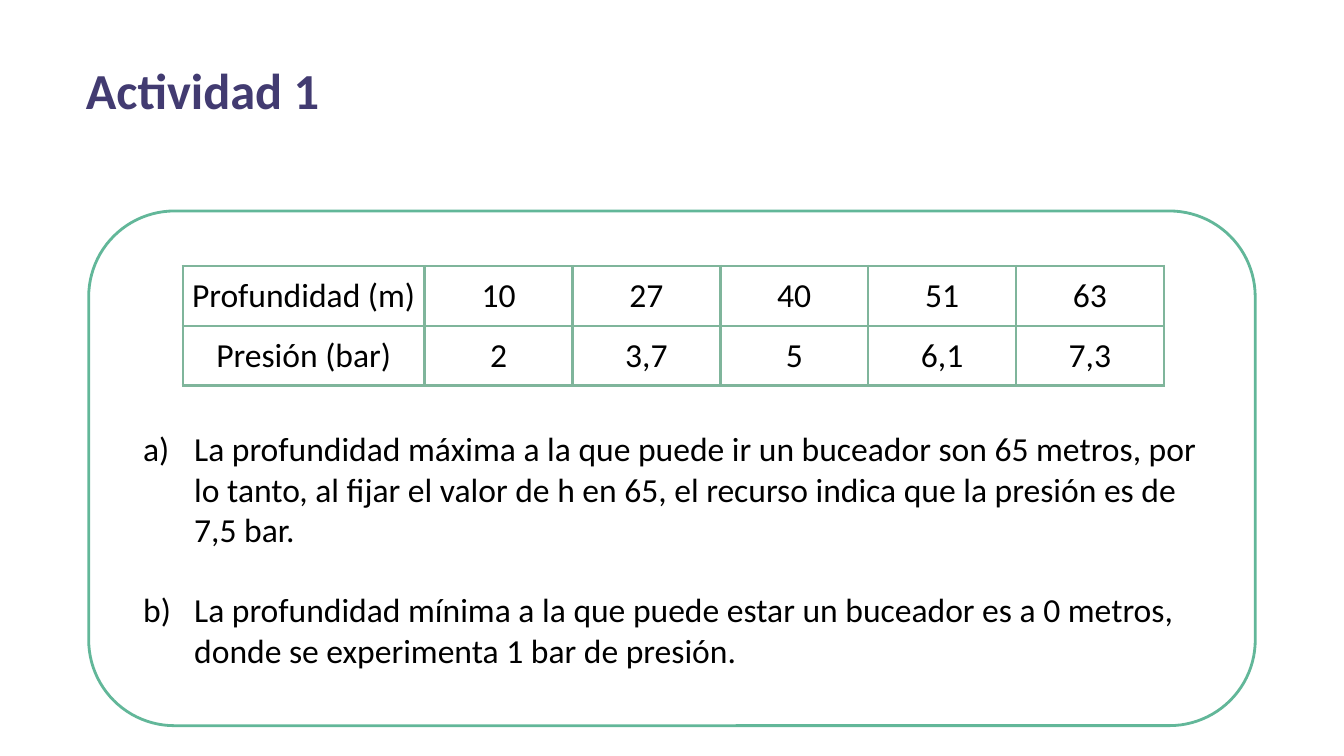
from lxml import etree
from pptx import Presentation
from pptx.dml.color import RGBColor
from pptx.enum.shapes import MSO_SHAPE
from pptx.enum.text import MSO_ANCHOR, PP_ALIGN
from pptx.oxml.ns import qn
from pptx.util import Inches, Pt

ROUNDED = MSO_SHAPE.ROUNDED_RECTANGLE
TOP, MIDDLE = MSO_ANCHOR.TOP, MSO_ANCHOR.MIDDLE
LEFT, CENTER = PP_ALIGN.LEFT, PP_ALIGN.CENTER

PURPLE = RGBColor(0x42, 0x3B, 0x71)
GREEN = RGBColor(0x62, 0xB7, 0x99)
GRID = RGBColor(0x7F, 0xB5, 0x9B)
BLACK = RGBColor(0, 0, 0)
FONT = "Calibri"

ROWS = [
    ["Profundidad (m)", "10", "27", "40", "51", "63"],
    ["Presión (bar)", "2", "3,7", "5", "6,1", "7,3"],
]
ANSWERS = [
    "La profundidad máxima a la que puede ir un buceador son 65 metros, por lo tanto, "
    "al fijar el valor de h en 65, el recurso indica que la presión es de 7,5 bar.",
    "La profundidad mínima a la que puede estar un buceador es a 0 metros, "
    "donde se experimenta 1 bar de presión.",
]


def add_run(paragraph, text, size=18, color=BLACK, bold=False):
    run = paragraph.add_run()
    run.text = text
    run.font.name = FONT
    run.font.size = Pt(size)
    run.font.color.rgb = color
    run.font.bold = bold


def set_insets(target, horizontal, top, bottom):
    target.margin_left = target.margin_right = Inches(horizontal)
    target.margin_top = Inches(top)
    target.margin_bottom = Inches(bottom)


def add_title(slide, left, top, width, height):
    box = slide.shapes.add_textbox(Inches(left), Inches(top), Inches(width), Inches(height))
    frame = box.text_frame
    frame.word_wrap = True
    set_insets(frame, 0.07, 0.04, 0.04)
    add_run(frame.paragraphs[0], "Actividad 1", 27, PURPLE, True)


def number_paragraph(paragraph):
    """Give a paragraph a hanging a), b) ... number."""
    properties = paragraph._p.get_or_add_pPr()
    properties.set("marL", str(Inches(0.5)))
    properties.set("indent", str(Inches(-0.38)))
    color = etree.SubElement(properties, qn("a:buClr"))
    etree.SubElement(color, qn("a:srgbClr"), val=str(BLACK))
    etree.SubElement(properties, qn("a:buFont"), typeface=FONT)
    etree.SubElement(properties, qn("a:buAutoNum"), type="alphaLcParenR")


def add_answer_panel(slide, left, top, width, height):
    panel = slide.shapes.add_shape(
        ROUNDED, Inches(left), Inches(top), Inches(width), Inches(height))
    panel.shadow.inherit = False
    panel.fill.background()
    panel.line.color.rgb = GREEN
    panel.line.width = Pt(1.5)

    # Answers start below the table
    frame = panel.text_frame
    frame.word_wrap = True
    frame.vertical_anchor = TOP
    set_insets(frame, 0.1, 1.43, 0.1)
    for index, answer in enumerate(ANSWERS):
        paragraph = frame.add_paragraph() if index else frame.paragraphs[0]
        number_paragraph(paragraph)
        paragraph.alignment = LEFT
        if index:
            paragraph.space_before = Pt(21.5)
        add_run(paragraph, answer)


def set_borders(cell):
    properties = cell._tc.get_or_add_tcPr()
    for position, side in enumerate(("lnL", "lnR", "lnT", "lnB")):
        line = etree.Element(qn(f"a:{side}"), w=str(Pt(1.5)))
        fill = etree.SubElement(line, qn("a:solidFill"))
        etree.SubElement(fill, qn("a:srgbClr"), val=str(GRID))
        properties.insert(position, line)


def add_data_table(slide, left, top, label_width, value_width, row_height):
    columns = len(ROWS[0])
    widths = [label_width] + [value_width] * (columns - 1)
    table = slide.shapes.add_table(
        len(ROWS), columns, Inches(left), Inches(top),
        Inches(sum(widths)), Inches(row_height * len(ROWS))).table
    table.first_row = table.horz_banding = False
    for column, width in zip(table.columns, widths):
        column.width = Inches(width)
    for row, values in enumerate(ROWS):
        for column, value in enumerate(values):
            cell = table.cell(row, column)
            cell.fill.background()
            cell.vertical_anchor = MIDDLE
            set_insets(cell, 0.05, 0.07, 0.07)
            set_borders(cell)
            paragraph = cell.text_frame.paragraphs[0]
            paragraph.alignment = CENTER
            add_run(paragraph, value)


def main():
    presentation = Presentation()
    presentation.slide_width = Inches(10)
    # Widescreen, 16:9
    presentation.slide_height = presentation.slide_width * 9 // 16
    slide = presentation.slides.add_slide(presentation.slide_layouts[6])
    add_answer_panel(slide, 0.66, 1.57, 8.68, 3.83)
    add_data_table(slide, 1.36, 1.98, 1.8, 1.1, 0.44)
    add_title(slide, 0.57, 0.4, 6.7, 0.53)
    presentation.save("out.pptx")


if __name__ == "__main__":
    main()
